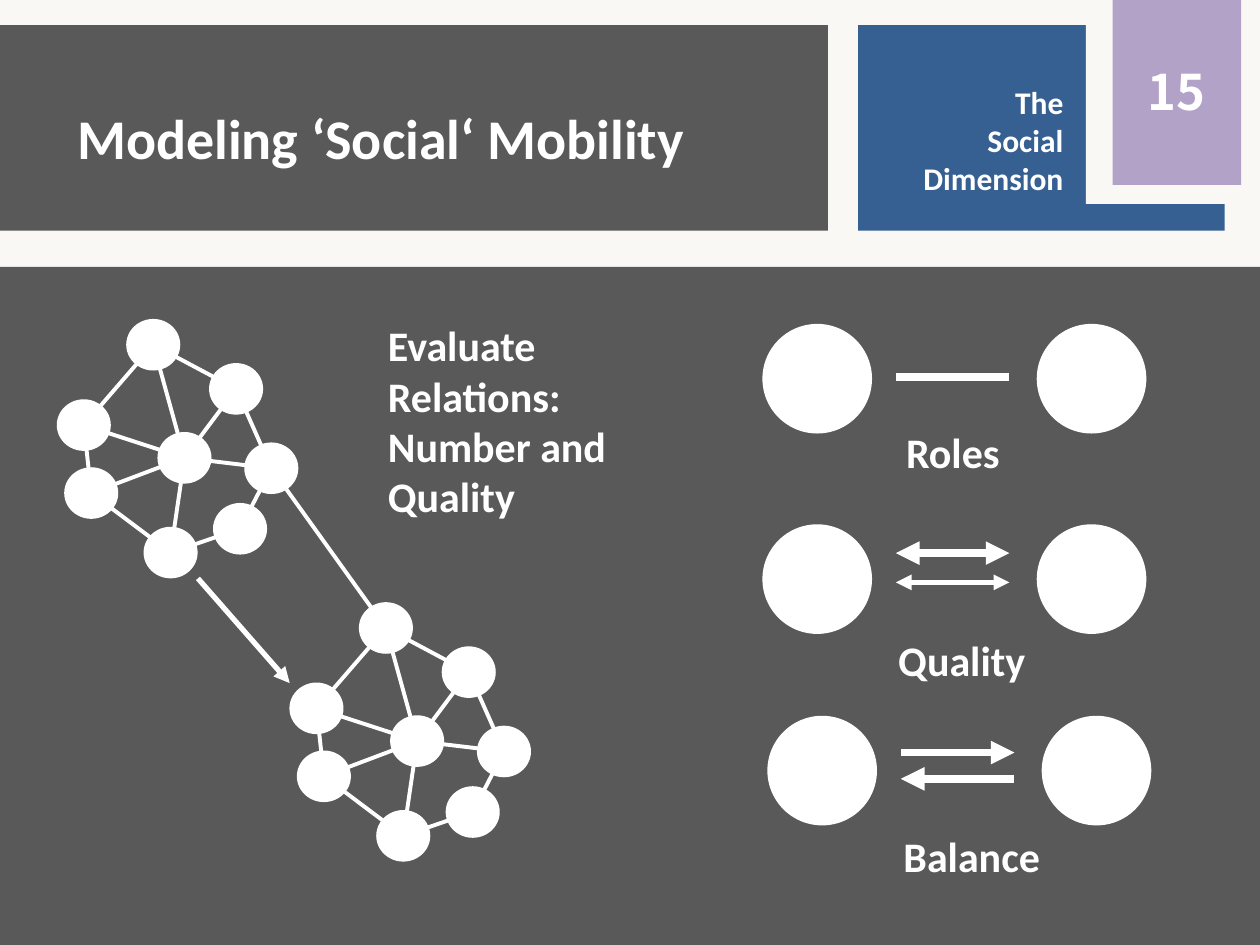
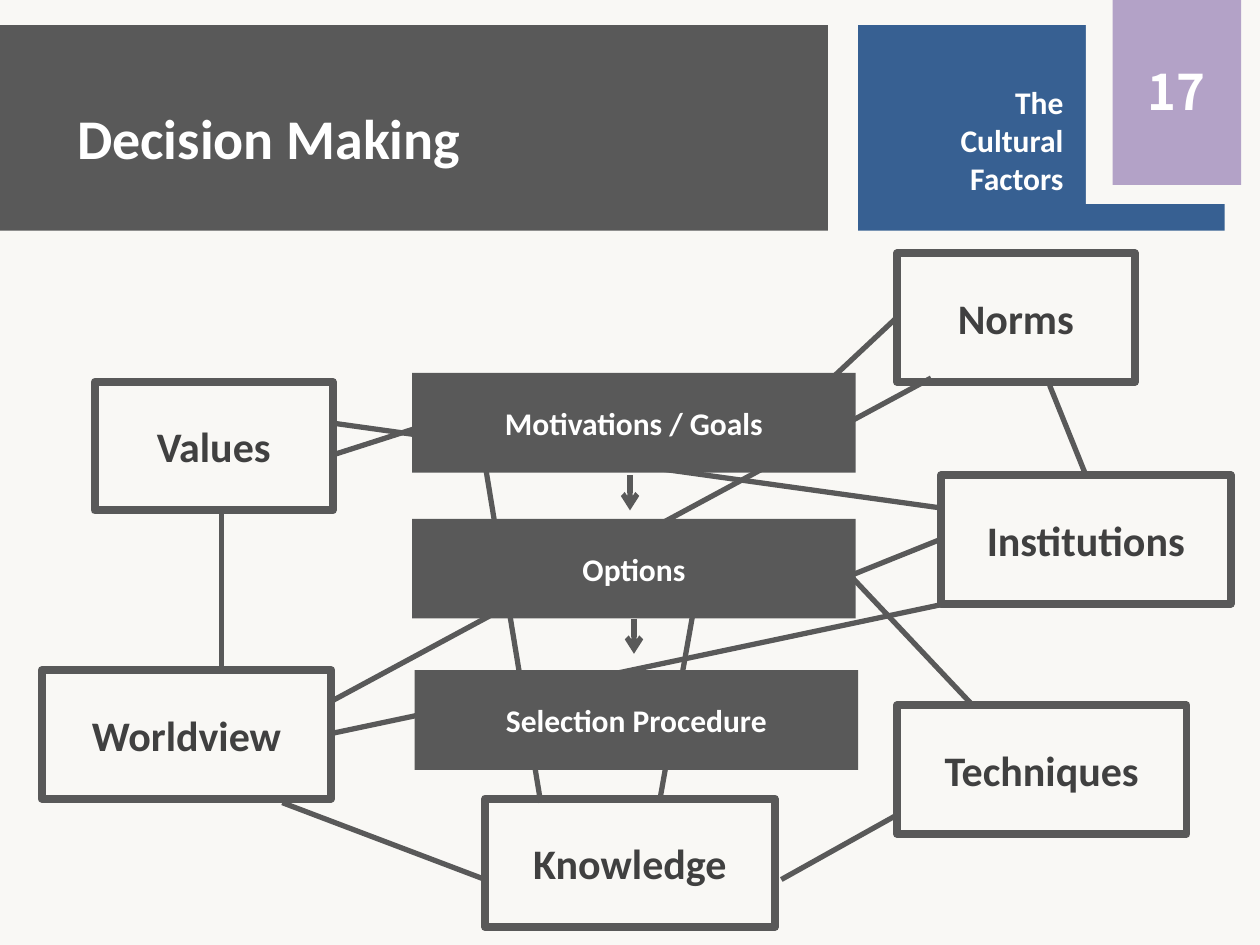
from lxml import etree
from pptx import Presentation
from pptx.dml.color import RGBColor
from pptx.enum.shapes import MSO_CONNECTOR, MSO_SHAPE
from pptx.enum.text import MSO_ANCHOR, PP_ALIGN
from pptx.oxml.ns import qn
from pptx.util import Cm, Pt

RECTANGLE, OVAL = MSO_SHAPE.RECTANGLE, MSO_SHAPE.OVAL
STRAIGHT = MSO_CONNECTOR.STRAIGHT
LEFT, CENTER, RIGHT = PP_ALIGN.LEFT, PP_ALIGN.CENTER, PP_ALIGN.RIGHT
TOP, MIDDLE = MSO_ANCHOR.TOP, MSO_ANCHOR.MIDDLE
TITLE_ONLY = 5

COLORS = {
    "paper": "F9F8F5",
    "gray": "595959",
    "ink": "404040",
    "blue": "376092",
    "purple": "B3A2C7",
    "white": "FFFFFF",
}
TEXT_FONT = "Calibri"
NUMBER_FONT = "Noto Sans CJK SC"

# Social network: node centres in cm, and which nodes are related
NODE_SIZE = (1.09, 1.04)
NODES = {
    "top": (3.09, 6.95),
    "upper right": (4.76, 7.84),
    "right": (5.47, 9.44),
    "lower right": (4.84, 10.66),
    "bottom": (3.44, 11.14),
    "lower left": (1.84, 9.94),
    "left": (1.69, 8.57),
    "hub": (3.72, 9.23),
}
RELATIONS = [
    ("top", "upper right"), ("upper right", "right"), ("right", "lower right"),
    ("lower right", "bottom"), ("bottom", "lower left"), ("lower left", "left"),
    ("left", "top"), ("hub", "top"), ("hub", "upper right"), ("hub", "right"),
    ("hub", "bottom"), ("hub", "lower left"), ("hub", "left"),
]
SECOND_NETWORK_SHIFT = (4.69, 5.71)

# Caption, caption position, left and top of the circle pair,
# arrows as (distance below top, width, head, tail)
PAIRS = [
    ("Roles", (16.71, 8.48), (15.37, 6.53), [(1.07, 4.5, None, None)]),
    ("Quality", (16.89, 12.67), (15.37, 10.57),
     [(0.58, 4.5, "triangle", "triangle"), (1.17, 3, "triangle", "triangle")]),
    ("Balance", (17.09, 16.61), (15.47, 14.43),
     [(0.74, 4.5, None, "triangle"), (1.27, 4.5, "triangle", None)]),
]
CIRCLE_SIZE, CIRCLE_STEP = 2.21, 5.53
ARROW_INDENT, ARROW_LENGTH = 2.69, 2.29

# Factor: left, top, width
FACTORS = {
    "Values": (1.91, 7.7, 4.8),
    "Norms": (18.08, 5.11, 4.8),
    "Worldview": (0.84, 13.51, 5.84),
    "Knowledge": (9.78, 16.1, 5.84),
    "Techniques": (18.08, 14.22, 5.84),
    "Institutions": (18.97, 9.58, 5.84),
}
FACTOR_HEIGHT = 2.59
FACTOR_LINKS = [
    ((18.08, 6.4), (16.69, 7.7)),
    ((8.71, 8.53), (6.71, 9.17)),
    ((18.97, 10.87), (17.2, 11.58)),
    ((19.61, 14.22), (17.12, 11.58)),
    ((14, 12.19), (13.31, 16.08)),
    ((18.97, 12.19), (6.71, 14.78)),
    ((18.97, 10.24), (6.71, 8.53)),
    ((18.77, 7.62), (6.71, 14.12)),
    ((4.47, 10.31), (4.47, 13.49)),
    ((9.78, 17.73), (5.69, 16.18)),
    ((21.16, 7.77), (21.89, 9.58)),
    ((18.08, 16.43), (15.75, 17.73)),
    ((9.78, 9.37), (10.9, 16.18)),
]
STEP_ARROWS = [((12.7, 9.58), (12.7, 10.29)), ((12.78, 12.47), (12.78, 13.18))]
STEPS = {
    "Motivations / Goals": (8.31, 7.52),
    "Options": (8.31, 10.46),
    "Selection Procedure": (8.36, 13.51),
}
STEP_SIZE = (8.94, 2.01)


def color(name):
    return RGBColor.from_string(COLORS[name])


class Deck:
    """Holds the presentation, its style and the slide being drawn."""

    def __init__(self):
        self.presentation = Presentation()
        self.presentation.slide_width = Cm(25.4)
        self.presentation.slide_height = Cm(19.05)
        self.slide = None

    def new_slide(self, title, section, number):
        layout = self.presentation.slide_layouts[TITLE_ONLY]
        self.slide = self.presentation.slides.add_slide(layout)
        background = self.slide.background.fill
        background.solid()
        background.fore_color.rgb = color("paper")

        self.shape(RECTANGLE, (0, 0.51, 16.69, 4.14), "gray")
        self.title(title)
        self.shape(RECTANGLE, (17.3, 0.51, 7.39, 4.14), "blue")
        self.shape(RECTANGLE, (21.89, -0.08, 3.51, 4.19), "paper")
        tab = self.shape(RECTANGLE, (22.43, -0.08, 2.59, 3.81), "purple")
        self.set_text(tab, number, 28, font=NUMBER_FONT)
        label = self.shape(RECTANGLE, (17.3, 1.55, 4.39, 2.57), "blue")
        self.set_text(label, section, 18, align=RIGHT, anchor=TOP)
        label.text_frame.paragraphs[0].space_after = Pt(6)

    def title(self, text):
        title = self.slide.shapes.title
        title.left, title.top = Cm(1.3), Cm(0.71)
        title.width, title.height = Cm(21.59), Cm(4.09)
        self.set_text(title, text, 32, align=LEFT)
        # Bring the title in front of its band
        self.slide.shapes._spTree.append(title._element)

    def set_text(self, shape, text, size, ink="white", align=CENTER,
                 anchor=MIDDLE, font=TEXT_FONT):
        frame = shape.text_frame
        frame.word_wrap = True
        frame.vertical_anchor = anchor
        paragraph = frame.paragraphs[0]
        paragraph.text = text
        paragraph.alignment = align
        paragraph.font.name = font
        paragraph.font.size = Pt(size)
        paragraph.font.bold = True
        paragraph.font.color.rgb = color(ink)

    def shape(self, kind, box, fill=None, outline=None):
        shape = self.slide.shapes.add_shape(kind, *map(Cm, box))
        shape.shadow.inherit = False
        if fill:
            shape.fill.solid()
            shape.fill.fore_color.rgb = color(fill)
        else:
            shape.fill.background()
        if outline:
            shape.line.color.rgb = color(outline)
            shape.line.width = Pt(4.5)
        else:
            shape.line.fill.background()
        return shape

    def text(self, text, box, align=CENTER):
        text_box = self.slide.shapes.add_textbox(*map(Cm, box))
        self.set_text(text_box, text, 24, align=align, anchor=TOP)

    def line(self, start, end, ink, width, head=None, tail=None):
        connector = self.slide.shapes.add_connector(
            STRAIGHT, *map(Cm, (*start, *end)))
        connector.line.color.rgb = color(ink)
        connector.line.width = Pt(width)
        properties = connector._element.spPr
        outline = properties.find(qn("a:ln"))
        for tag, arrow in (("a:headEnd", head), ("a:tailEnd", tail)):
            if arrow:
                etree.SubElement(outline, qn(tag), type=arrow)
        etree.SubElement(properties, qn("a:effectLst"))

    def network(self, shift=(0, 0)):
        """Draw the related nodes and return their centres."""
        centers = {name: (x + shift[0], y + shift[1])
                   for name, (x, y) in NODES.items()}
        width, height = NODE_SIZE
        for first, second in RELATIONS:
            self.line(centers[first], centers[second], "white", 2.25)
        for x, y in centers.values():
            box = (x - width / 2, y - height / 2, width, height)
            self.shape(OVAL, box, "white")
        return centers

    def circle_pair(self, caption, caption_at, corner, arrows):
        left, top = corner
        for column in range(2):
            box = (left + column * CIRCLE_STEP, top, CIRCLE_SIZE, CIRCLE_SIZE)
            self.shape(OVAL, box, "white")
        start = left + ARROW_INDENT
        for below, width, head, tail in arrows:
            y = top + below
            self.line((start, y), (start + ARROW_LENGTH, y),
                      "white", width, head, tail)
        self.text(caption, (*caption_at, 5, 1.27))


def draw_social_mobility(deck):
    deck.new_slide("Modeling ‘Social‘ Mobility", "The\vSocial\vDimension", "15")
    deck.shape(RECTANGLE, (0, 5.38, 25.4, 13.67), "gray")
    first = deck.network()
    second = deck.network(SECOND_NETWORK_SHIFT)
    deck.line(first["right"], second["top"], "white", 2.25)
    deck.line((3.99, 11.66), (5.84, 13.77), "white", 3, tail="triangle")
    deck.text("Evaluate Relations: Number and Quality",
              (7.57, 6.32, 5, 4.37), align=LEFT)
    for pair in PAIRS:
        deck.circle_pair(*pair)


def draw_decision_making(deck):
    deck.new_slide("Decision Making", "The\vCultural\vFactors", "17")
    for name, box in FACTORS.items():
        factor = deck.shape(RECTANGLE, (*box, FACTOR_HEIGHT), outline="gray")
        deck.set_text(factor, name, 24, ink="ink")
    for start, end in STEP_ARROWS:
        deck.line(start, end, "gray", 3, tail="arrow")
    for start, end in FACTOR_LINKS:
        deck.line(start, end, "gray", 3)
    for name, corner in STEPS.items():
        step = deck.shape(RECTANGLE, (*corner, *STEP_SIZE), "gray")
        deck.set_text(step, name, 18)


def main():
    deck = Deck()
    draw_social_mobility(deck)
    draw_decision_making(deck)
    deck.presentation.save("out.pptx")


if __name__ == "__main__":
    main()
